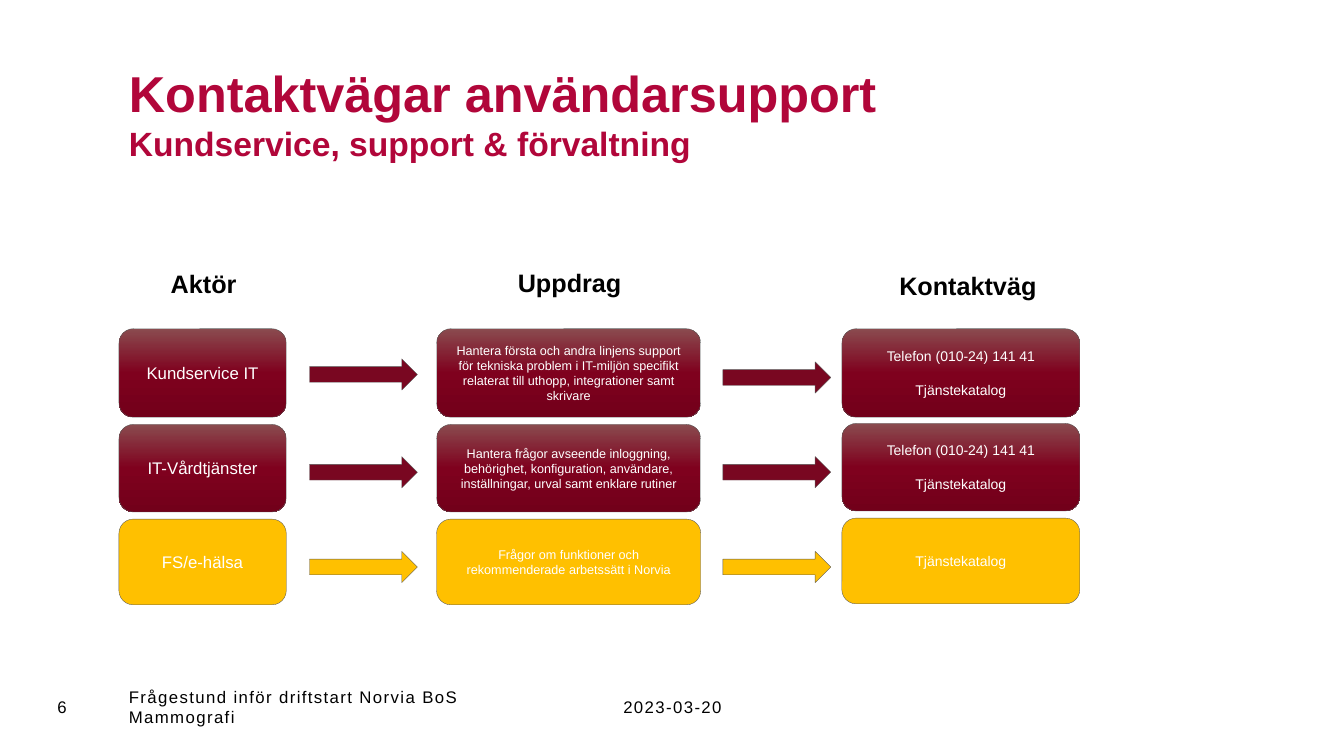
"""Build the slide on contact routes for user support."""
from copy import deepcopy

from pptx import Presentation
from pptx.dml.color import RGBColor
from pptx.enum.shapes import MSO_SHAPE as Shape
from pptx.enum.text import MSO_ANCHOR as Anchor, PP_ALIGN as Align
from pptx.oxml.ns import qn
from pptx.util import Inches, Pt

WINE, GOLD = "790721", "FFC000"
WINE_GRADIENT = [(0, "8A4B4F"), (0.5, "7F011E"), (1, "72001A")]


def write(shape, lines, align=Align.LEFT, anchor=Anchor.MIDDLE, gap=0, spacing=0, **font_format):
    """Fill a shape with one paragraph per line."""
    frame = shape.text_frame
    frame.word_wrap = True
    frame.vertical_anchor = anchor
    frame.text = "\n".join(lines)
    color = RGBColor.from_string(font_format.pop("color", "000000"))
    for index, paragraph in enumerate(frame.paragraphs):
        paragraph.alignment = align
        if index and gap:
            paragraph.space_before = Pt(gap)
        for run in paragraph.runs:
            run.font.color.rgb = color
            for name, value in {"name": "Arial", **font_format}.items():
                setattr(run.font, name, value)
            if spacing:
                run.font._element.set("spc", str(spacing))
    return frame


def add_block(kind, left, top, width, height, color):
    """Add an outlined shape, with a gradient when color is a list of stops."""
    shape = slide.shapes.add_shape(kind, *map(Inches, (left, top, width, height)))
    shape.shadow.inherit = False
    shape.line.color.rgb = RGBColor.from_string("595959")
    shape.line.width = Pt(0.25)
    if isinstance(color, str):
        shape.fill.solid()
        shape.fill.fore_color.rgb = RGBColor.from_string(color)
        return shape
    shape.fill.gradient()
    shape.fill.gradient_angle = 270
    stop_list = shape._element.spPr.find(".//" + qn("a:gsLst"))
    stop_list.insert(1, deepcopy(stop_list[0]))
    for stop, (position, stop_color) in zip(shape.fill.gradient_stops, color):
        stop.position = position
        stop.color.rgb = RGBColor.from_string(stop_color)
    return shape


presentation = Presentation()
presentation.slide_width = Inches(13.33)
presentation.slide_height = Inches(7.5)
slide = presentation.slides.add_slide(presentation.slide_layouts[6])

title = slide.shapes.add_textbox(Inches(1.18), Inches(0.37), Inches(10.24), Inches(1.42))
title_format = {"color": "B1063A", "bold": True}
title_frame = write(title, ["Kontaktvägar användarsupport"], size=Pt(36), **title_format)
title_frame.margin_top, title_frame.margin_bottom = Inches(0.08), 0
title_paragraph = title_frame.paragraphs[0]
title_paragraph.add_line_break()
subtitle = title_paragraph.add_run()
subtitle.text = "Kundservice, support & förvaltning"
subtitle.font.color.rgb = RGBColor.from_string(title_format["color"])
for name, value in {"name": "Arial", "size": Pt(24), "bold": True}.items():
    setattr(subtitle.font, name, value)

footers = [
    (1.18, 3.94, "Frågestund inför driftstart Norvia BoS Mammografi", Align.LEFT, 100),
    (0.47, 0.57, "6", Align.LEFT, 0),
    (5.31, 2.72, "2023-03-20", Align.CENTER, 100),
]
for left, width, text, align, spacing in footers:
    box = slide.shapes.add_textbox(Inches(left), Inches(6.81), Inches(width), Inches(0.4))
    write(box, [text], align, spacing=spacing, size=Pt(12))

headings = [(1.59, 2.61, 0.86, "Aktör"), (5.03, 2.6, 1.24, "Uppdrag"), (8.81, 2.63, 1.58, "Kontaktväg")]
for left, top, width, text in headings:
    box = slide.shapes.add_textbox(Inches(left), Inches(top), Inches(width), Inches(0.4))
    write(box, [text], Align.CENTER, Anchor.TOP, size=Pt(18), bold=True).word_wrap = False

phone, catalogue = "Telefon (010-24) 141 41", "Tjänstekatalog"
columns = [(1.18, 1.66, 12), (4.33, 2.62, 9), (8.35, 2.36, 10)]
rows = [
    ((3.26, 3.26, 3.26), 0.88, (3.56, 3.59), WINE_GRADIENT, WINE, (
        ["Kundservice IT"],
        ["Hantera första och andra linjens support för tekniska problem i IT-miljön "
         "specifikt relaterat till uthopp, integrationer samt skrivare"],
        [phone, catalogue])),
    ((4.21, 4.21, 4.2), 0.87, (4.53, 4.53), WINE_GRADIENT, WINE, (
        ["IT-Vårdtjänster"],
        ["Hantera frågor avseende inloggning, behörighet, konfiguration, användare, "
         "inställningar, urval samt enklare rutiner"],
        [phone, catalogue])),
    ((5.15, 5.15, 5.14), 0.85, (5.47, 5.47), GOLD, GOLD, (
        ["FS/e-hälsa"],
        ["Frågor om funktioner och rekommenderade arbetssätt i Norvia"],
        [catalogue])),
]
for tops, height, arrow_tops, box_color, arrow_color, texts in rows:
    for (left, width, size), top, lines in zip(columns, tops, texts):
        box = add_block(Shape.ROUNDED_RECTANGLE, left, top, width, height, box_color)
        write(box, lines, Align.CENTER, gap=12, color="FFFFFF", size=Pt(size))
    for left, top in zip((3.07, 7.17), arrow_tops):
        add_block(Shape.RIGHT_ARROW, left, top, 1.07, 0.31, arrow_color)

presentation.save("out.pptx")
